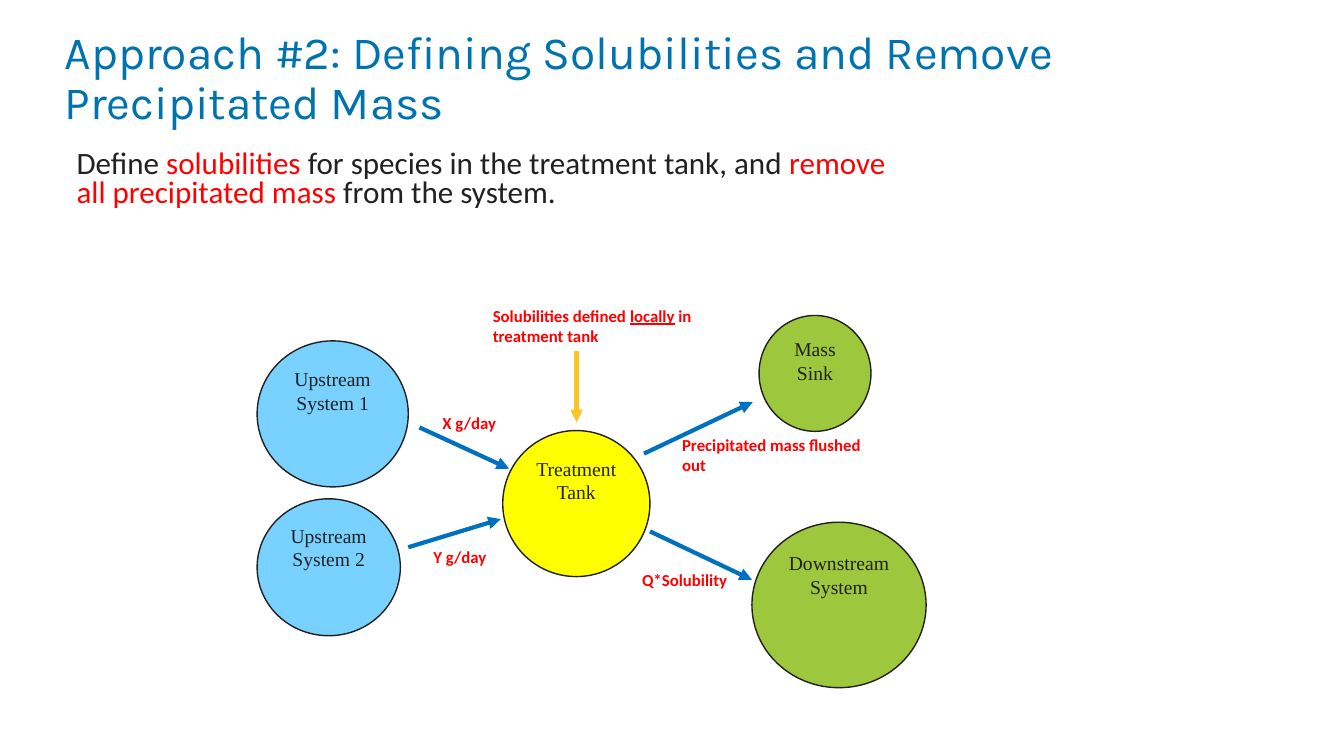
from typing import NamedTuple

from lxml.etree import SubElement
from pptx import Presentation
from pptx.dml.color import RGBColor
from pptx.enum.shapes import MSO_CONNECTOR, MSO_SHAPE
from pptx.enum.text import MSO_ANCHOR, MSO_AUTO_SIZE, PP_ALIGN
from pptx.oxml.ns import qn
from pptx.slide import Slide
from pptx.text.text import TextFrame
from pptx.util import Cm, Pt

INK = "212121"
RED = "FF0000"
BLUE = "0070C0"
GOLD = "F8C522"
SKY = "79D1FF"
YELLOW = "FFFF00"
GREEN = "9DC73C"


class Span(NamedTuple):
    text: str
    color: str
    underlined: bool = False


class Reservoir(NamedTuple):
    name: str
    left: float
    top: float
    width: float
    height: float
    fill: str


class Flow(NamedTuple):
    start: tuple[float, float]
    end: tuple[float, float]
    color: str = BLUE


class Label(NamedTuple):
    spans: list[Span]
    left: float
    top: float
    width: float


RESERVOIRS = [
    Reservoir("Upstream System 1", 6.48, 8.59, 3.81, 3.68, SKY),
    Reservoir("Upstream System 2", 6.48, 12.57, 3.61, 3.45, SKY),
    Reservoir("Treatment Tank", 12.67, 10.85, 3.71, 3.68, YELLOW),
    Reservoir("Mass Sink", 19.13, 7.95, 2.82, 2.92, GREEN),
    Reservoir("Downstream System", 18.95, 13.16, 4.39, 4.17, GREEN),
]

FLOWS = [
    Flow((10.57, 10.77), (12.83, 11.81)),
    Flow((10.29, 13.79), (12.62, 13.08)),
    Flow((16.23, 11.43), (18.97, 10.13)),
    Flow((16.38, 13.39), (18.95, 14.61)),
    Flow((14.53, 8.84), (14.53, 10.64), GOLD),
]

LABELS = [
    Label([Span("X g/day", RED)], 10.9, 10.01, 2.82),
    Label([Span("Y g/day", RED)], 10.67, 13.39, 2.82),
    Label([Span("Q*Solubility", RED)], 15.93, 13.97, 2.82),
    Label([Span("Precipitated mass flushed out", RED)], 16.94, 10.82, 5.66),
    Label(
        [
            Span("Solubilities defined ", RED),
            Span("locally", RED, underlined=True),
            Span(" in treatment tank", RED),
        ],
        12.17, 7.57, 5.66,
    ),
]

STATEMENT = [
    Span("Define ", INK),
    Span("solubilities", RED),
    Span(" for species in the treatment tank, and ", INK),
    Span("remove all precipitated mass", RED),
    Span(" from the system.", INK),
]


def rgb(color: str) -> RGBColor:
    return RGBColor.from_string(color)


def write_spans(frame: TextFrame, spans: list[Span], size: float, bold: bool) -> None:
    frame.word_wrap = True
    paragraph = frame.paragraphs[0]
    paragraph.font.name = "Calibri"
    paragraph.font.size = Pt(size)
    paragraph.font.bold = bold
    for span in spans:
        run = paragraph.add_run()
        run.text = span.text
        run.font.color.rgb = rgb(span.color)
        if span.underlined:
            run.font.underline = True


def add_heading(slide: Slide) -> None:
    heading = slide.shapes.title
    heading.left, heading.top = Cm(1.63), Cm(0.84)
    heading.width, heading.height = Cm(25.86), Cm(2.34)
    frame = heading.text_frame
    frame.text = "Approach #2: Defining Solubilities and Remove Precipitated Mass"
    frame.auto_size = MSO_AUTO_SIZE.NONE
    frame.word_wrap = True
    frame.vertical_anchor = MSO_ANCHOR.MIDDLE
    frame.margin_left = frame.margin_right = frame.margin_top = frame.margin_bottom = 0
    paragraph = frame.paragraphs[0]
    paragraph.alignment = PP_ALIGN.LEFT
    paragraph.line_spacing = 0.9
    paragraph.font.name = "Karla"
    paragraph.font.size = Pt(33)
    paragraph.font.color.rgb = rgb("0073AF")


def add_statement(slide: Slide) -> None:
    statement = slide.shapes.add_textbox(Cm(1.68), Cm(3.66), Cm(20.96), Cm(1.91))
    frame = statement.text_frame
    frame.margin_left, frame.margin_right = Cm(0.25), 0
    write_spans(frame, STATEMENT, 22.2, False)
    frame.paragraphs[0].line_spacing = 0.8


def add_reservoir(slide: Slide, reservoir: Reservoir) -> None:
    circle = slide.shapes.add_shape(
        MSO_SHAPE.OVAL, Cm(reservoir.left), Cm(reservoir.top),
        Cm(reservoir.width), Cm(reservoir.height),
    )
    circle.shadow.inherit = False
    circle.fill.solid()
    circle.fill.fore_color.rgb = rgb(reservoir.fill)
    circle.line.color.rgb = rgb(INK)
    circle.line.width = Pt(1)
    frame = circle.text_frame
    frame.text = reservoir.name
    frame.word_wrap = True
    frame.vertical_anchor = MSO_ANCHOR.TOP
    paragraph = frame.paragraphs[0]
    paragraph.alignment = PP_ALIGN.CENTER
    paragraph.font.name = "Times New Roman"
    paragraph.font.size = Pt(14)
    paragraph.font.color.rgb = rgb(INK)


def add_flow(slide: Slide, flow: Flow) -> None:
    arrow = slide.shapes.add_connector(
        MSO_CONNECTOR.STRAIGHT, *map(Cm, flow.start), *map(Cm, flow.end)
    )
    arrow.line.color.rgb = rgb(flow.color)
    arrow.line.width = Pt(3)
    SubElement(arrow.line._get_or_add_ln(), qn("a:tailEnd"), type="triangle")
    SubElement(arrow._element.spPr, qn("a:effectLst"))


def add_label(slide: Slide, label: Label) -> None:
    caption = slide.shapes.add_textbox(
        Cm(label.left), Cm(label.top), Cm(label.width), Cm(1.27)
    )
    caption.text_frame.vertical_anchor = MSO_ANCHOR.MIDDLE
    write_spans(caption.text_frame, label.spans, 12, True)


def main() -> None:
    presentation = Presentation()
    presentation.slide_width, presentation.slide_height = Cm(33.87), Cm(19.05)
    slide = presentation.slides.add_slide(presentation.slide_layouts[5])
    add_heading(slide)
    add_statement(slide)
    for reservoir in RESERVOIRS:
        add_reservoir(slide, reservoir)
    for flow in FLOWS:
        add_flow(slide, flow)
    for label in LABELS:
        add_label(slide, label)
    presentation.save("out.pptx")


if __name__ == "__main__":
    main()
